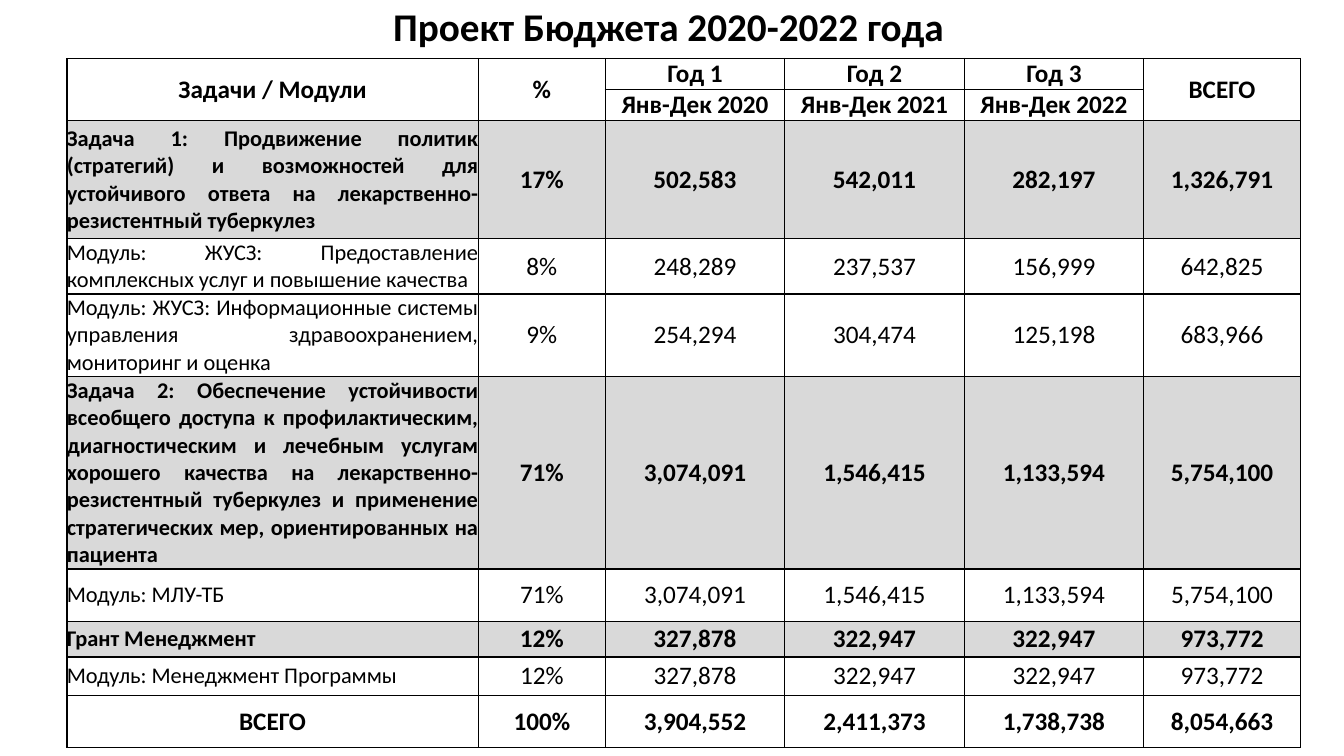
from dataclasses import dataclass

from lxml import etree
from pptx import Presentation
from pptx import util as u
from pptx.dml.color import RGBColor
from pptx.enum import text
from pptx.oxml import ns

COLORS = {"ink": "000000", "task": "D9D9D9"}
FONT = "Calibri"
LABEL_SIZE, VALUE_SIZE, TITLE_SIZE = 16, 18, 28
CENTER, LEFT, JUSTIFY = (
    text.PP_ALIGN.CENTER, text.PP_ALIGN.LEFT, text.PP_ALIGN.JUSTIFY)
MIDDLE = text.MSO_ANCHOR.MIDDLE


@dataclass
class BudgetRow:
    height: float
    values: list[str]
    align: text.PP_ALIGN = JUSTIFY
    label_size: int = LABEL_SIZE
    bold: bool = False
    fill: str | None = None


def task(height: float, *values: str, align=JUSTIFY) -> BudgetRow:
    return BudgetRow(height, list(values), align, bold=True, fill="task")


def module(height: float, *values: str, align=JUSTIFY) -> BudgetRow:
    return BudgetRow(height, list(values), align)


def heading(height: float, *values: str) -> BudgetRow:
    return BudgetRow(height, list(values), CENTER, VALUE_SIZE, bold=True)


COLUMN_WIDTHS = [293.9, 90.7, 128.2, 128.2, 128.2, 112.1]
MERGED_HEADINGS = (0, 1, 5)
ROWS = [
    heading(22.2, "Задачи / Модули", "%", "Год 1", "Год 2", "Год 3", "ВСЕГО"),
    heading(22.2, "", "", "Янв-Дек 2020", "Янв-Дек 2021", "Янв-Дек 2022", ""),
    task(84.4, "Задача 1: Продвижение политик (стратегий) и возможностей для "
         "устойчивого ответа на лекарственно-резистентный туберкулез",
         "17%", "502,583", "542,011", "282,197", "1,326,791"),
    module(39.4, "Модуль: ЖУСЗ: Предоставление комплексных услуг и повышение "
           "качества", "8%", "248,289", "237,537", "156,999", "642,825"),
    module(59, "Модуль: ЖУСЗ: Информационные системы управления "
           "здравоохранением, мониторинг и оценка",
           "9%", "254,294", "304,474", "125,198", "683,966"),
    task(137.5, "Задача 2: Обеспечение устойчивости всеобщего доступа к "
         "профилактическим, диагностическим и лечебным услугам хорошего "
         "качества на лекарственно-резистентный туберкулез и применение "
         "стратегических мер, ориентированных на пациента",
         "71%", "3,074,091", "1,546,415", "1,133,594", "5,754,100"),
    module(37.4, "Модуль: МЛУ-ТБ",
           "71%", "3,074,091", "1,546,415", "1,133,594", "5,754,100"),
    task(25.4, "Грант Менеджмент",
         "12%", "327,878", "322,947", "322,947", "973,772", align=LEFT),
    module(27.4, "Модуль: Менеджмент Программы",
           "12%", "327,878", "322,947", "322,947", "973,772", align=LEFT),
    heading(37.4, "ВСЕГО",
            "100%", "3,904,552", "2,411,373", "1,738,738", "8,054,663"),
]


def write(frame, words: str, *, size: float, bold: bool = False,
          align: text.PP_ALIGN = CENTER, spacing: float = 1.0) -> None:
    para = frame.paragraphs[0]
    para.alignment = align
    para.line_spacing = spacing
    span = para.add_run()
    span.text = words
    span.font.name = FONT
    span.font.size = u.Pt(size)
    span.font.bold = bold
    span.font.color.rgb = RGBColor.from_string(COLORS["ink"])


def add_borders(cell, width: float = 1) -> None:
    properties = cell._tc.get_or_add_tcPr()
    for side in ("lnL", "lnR", "lnT", "lnB"):
        line = etree.SubElement(properties, ns.qn(f"a:{side}"), w=str(u.Pt(width)))
        fill = etree.SubElement(line, ns.qn("a:solidFill"))
        etree.SubElement(fill, ns.qn("a:srgbClr"), val=COLORS["ink"])


def format_cell(cell, fill: str | None) -> None:
    cell.margin_left = cell.margin_right = u.Pt(0)
    cell.margin_top = cell.margin_bottom = u.Pt(0)
    cell.vertical_anchor = MIDDLE
    add_borders(cell)
    if fill:
        cell.fill.solid()
        cell.fill.fore_color.rgb = RGBColor.from_string(COLORS[fill])
    else:
        cell.fill.background()


def add_title(page, words: str) -> None:
    box = page.shapes.title
    box.left, box.top, box.width, box.height = map(u.Pt, (63.4, 0, 828, 41.8))
    frame = box.text_frame
    frame.word_wrap = True
    frame.vertical_anchor = MIDDLE
    write(frame, words, size=TITLE_SIZE, bold=True, spacing=0.9)


def add_budget(page, rows: list[BudgetRow]) -> None:
    left, top = 47.8, 41.8
    height = sum(row.height for row in rows)
    table = page.shapes.add_table(
        len(rows), len(COLUMN_WIDTHS), u.Pt(left), u.Pt(top),
        u.Pt(sum(COLUMN_WIDTHS)), u.Pt(height)).table
    table.first_row = table.horz_banding = False
    for column, width in zip(table.columns, COLUMN_WIDTHS):
        column.width = u.Pt(width)

    # Headings that span both header rows
    for index in MERGED_HEADINGS:
        table.cell(0, index).merge(table.cell(1, index))

    # Labels in the first column, centred figures in the others
    for r, row in enumerate(rows):
        table.rows[r].height = u.Pt(row.height)
        for c, words in enumerate(row.values):
            cell = table.cell(r, c)
            format_cell(cell, row.fill)
            if words:
                write(cell.text_frame, words, bold=row.bold,
                      size=VALUE_SIZE if c else row.label_size,
                      align=CENTER if c else row.align)


def main() -> None:
    deck = Presentation()
    deck.slide_width, deck.slide_height = u.Pt(960), u.Pt(540)
    page = deck.slides.add_slide(deck.slide_layouts.get_by_name("Title Only"))
    add_title(page, "Проект Бюджета 2020-2022 года")
    add_budget(page, ROWS)
    deck.save("out.pptx")


if __name__ == "__main__":
    main()
